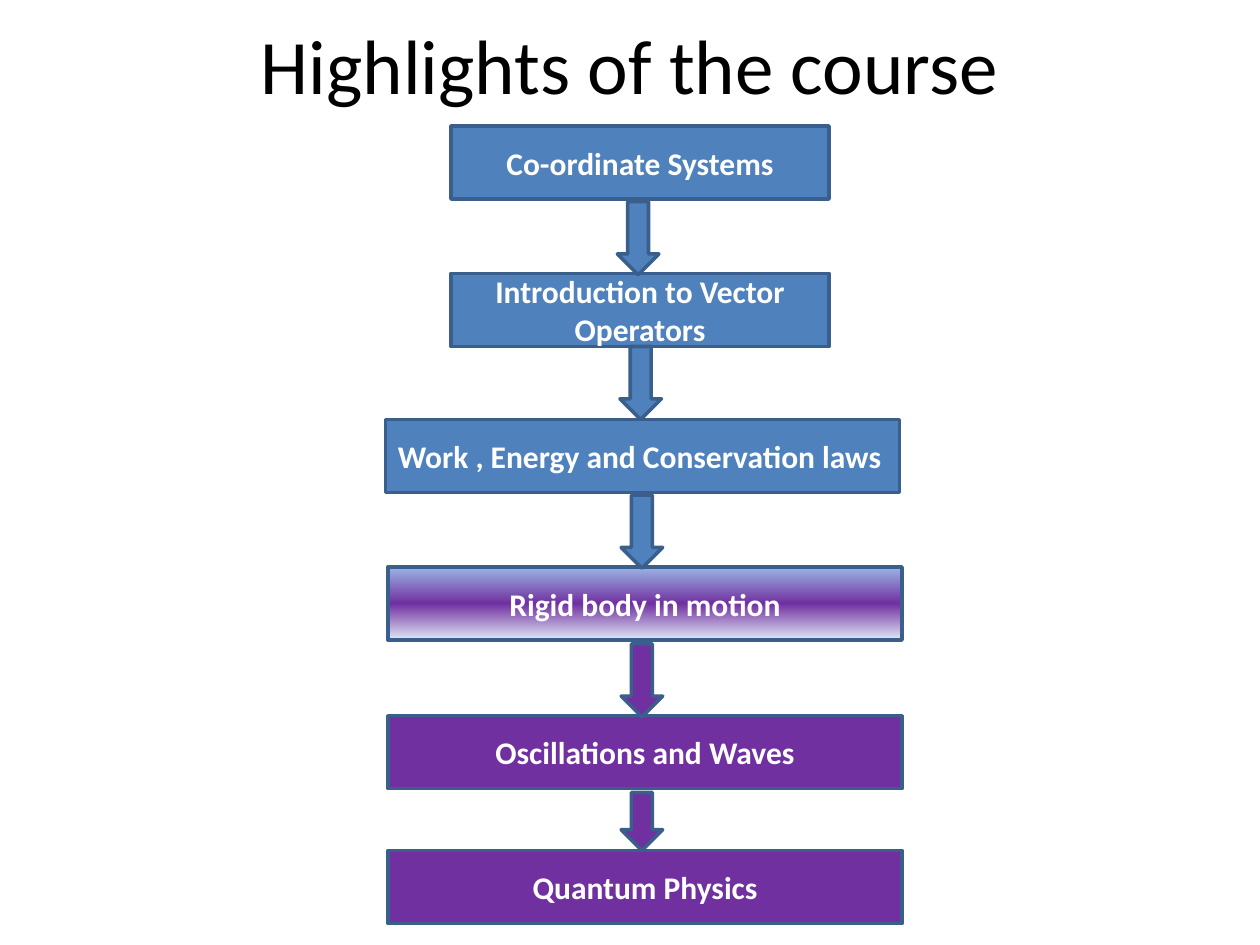
from copy import deepcopy
from pptx import Presentation
from pptx.util import Pt
from pptx.dml.color import RGBColor
from pptx.enum.shapes import MSO_SHAPE as Shape
from pptx.enum.text import MSO_ANCHOR as Anchor, PP_ALIGN as Align

BLUE = RGBColor(0x4F, 0x81, 0xBD)
EDGE = RGBColor(0x3A, 0x5F, 0x8C)
PURPLE = RGBColor(0x70, 0x30, 0xA0)
SKY = RGBColor(0x9A, 0xB5, 0xE4)
MIST = RGBColor(0xE1, 0xE8, 0xF5)
WHITE = RGBColor(0xFF, 0xFF, 0xFF)
BLACK = RGBColor(0, 0, 0)

PX = 9144
TALL = 58
NARROW, WIDE = 300, 408
STEM = 33
BLEND = [(0, SKY), (0.5, PURPLE), (1, MIST)]

TITLE = "Highlights of the course"
TOPICS = [
    ("Co-ordinate Systems", 358, 100, NARROW, BLUE, Align.CENTER),
    ("Introduction to Vector Operators", 358, 217, NARROW, BLUE, Align.CENTER),
    ("Work , Energy and Conservation laws", 306, 333, WIDE, BLUE, Align.LEFT),
    ("Rigid body in motion", 308, 450, WIDE, BLEND, Align.CENTER),
    ("Oscillations and Waves", 308, 568, WIDE, PURPLE, Align.CENTER),
    ("Quantum Physics", 308, 675, WIDE, PURPLE, Align.CENTER),
]
ARROWS = [
    (490, 160, TALL, BLUE),
    (492, 275, TALL, BLUE),
    (493, 393, TALL, BLUE),
    (493, 511, TALL, PURPLE),
    (493, 629, 46, PURPLE),
]


def emu(*sizes):
    return [size * PX for size in sizes]


def paint(fill, tint):
    if isinstance(tint, RGBColor):
        fill.solid()
        fill.fore_color.rgb = tint
        return
    fill.gradient()
    fill.gradient_angle = 270
    first = fill._xPr.find(".//{*}gs")
    first.addnext(deepcopy(first))
    for stop, (place, color) in zip(fill.gradient_stops, tint):
        stop.position = place
        stop.color.rgb = color


def write(shape, text, align, size, color, bold):
    frame = shape.text_frame
    frame.word_wrap = True
    frame.vertical_anchor = Anchor.MIDDLE
    para = frame.paragraphs[0]
    para.alignment = align
    run = para.add_run()
    run.text = text
    look = {"name": "Calibri", "size": Pt(size), "bold": bold}
    for key, value in look.items():
        setattr(run.font, key, value)
    run.font.color.rgb = color


def draw(slide, kind, box, tint):
    shape = slide.shapes.add_shape(kind, *emu(*box))
    shape.shadow.inherit = False
    paint(shape.fill, tint)
    shape.line.color.rgb = EDGE
    shape.line.width = Pt(2)
    return shape


def main():
    deck = Presentation()
    deck.slide_width, deck.slide_height = emu(1000, 750)
    slide = deck.slides.add_slide(deck.slide_layouts[6])

    head = slide.shapes.add_textbox(*emu(50, 1, 900, 100))
    write(head, TITLE, Align.CENTER, 44, BLACK, False)

    for text, left, top, width, tint, align in TOPICS:
        topic = draw(slide, Shape.RECTANGLE, (left, top, width, TALL), tint)
        write(topic, text, align, 18, WHITE, True)

    for left, top, height, tint in ARROWS:
        draw(slide, Shape.DOWN_ARROW, (left, top, STEM, height), tint)

    deck.save("out.pptx")


if __name__ == "__main__":
    main()
